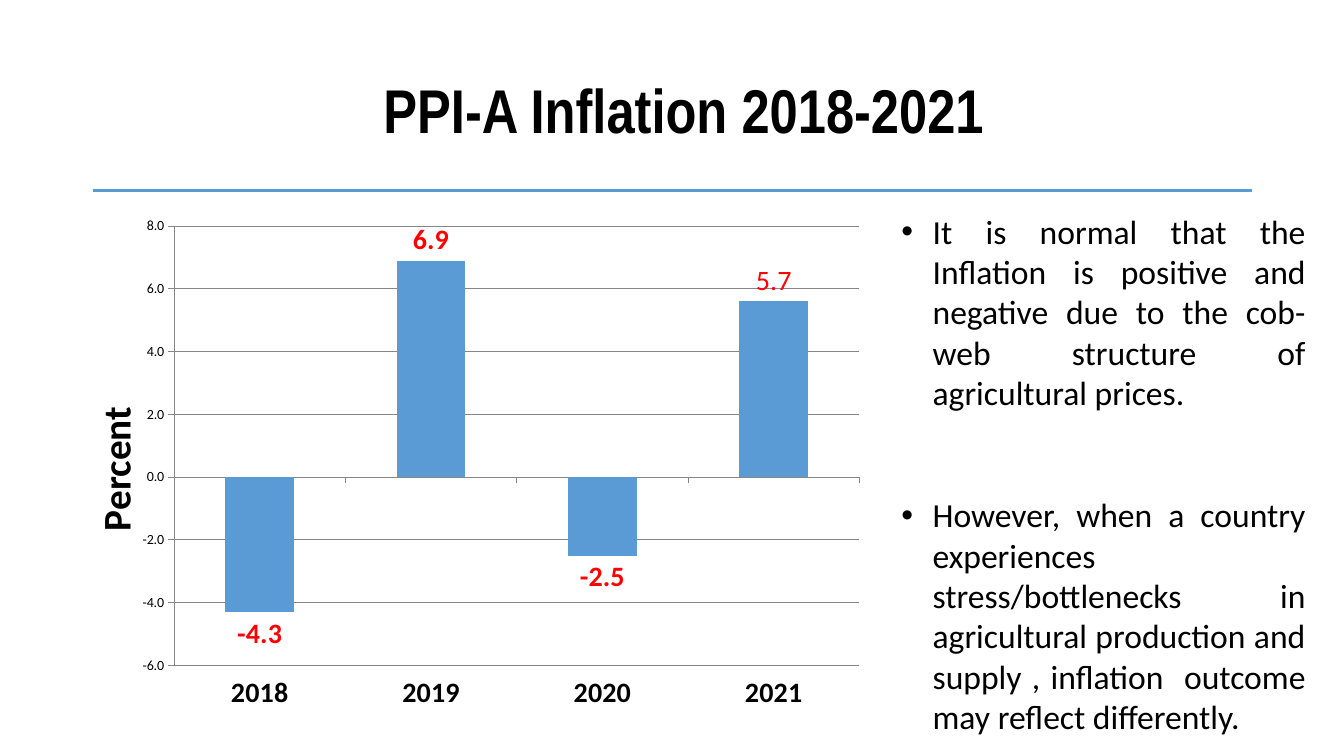
from typing import NamedTuple

from lxml.etree import SubElement
from pptx import Presentation
from pptx.chart.data import CategoryChartData
from pptx.dml.color import RGBColor
from pptx.enum.chart import XL_CHART_TYPE, XL_LABEL_POSITION, XL_TICK_LABEL_POSITION, XL_TICK_MARK
from pptx.enum.shapes import MSO_CONNECTOR
from pptx.enum.text import MSO_ANCHOR, MSO_AUTO_SIZE, PP_ALIGN
from pptx.oxml import parse_xml
from pptx.oxml.ns import nsdecls, qn
from pptx.util import Inches, Pt

BLACK, BLUE, RED, GRAY = "000000", "5B9BD5", "FF0000", "868686"


class Box(NamedTuple):
    left: float
    top: float
    width: float
    height: float


class Bullet(NamedTuple):
    text: str
    space_before: float


BULLETS = [
    Bullet("It is normal that the Inflation is positive and negative due to the "
           "cob-web structure of agricultural prices.", 0),
    Bullet("However, when a country experiences stress/bottlenecks in agricultural "
           "production and supply , inflation  outcome may reflect differently.", 58.6),
]
INFLATION = {"2018": -4.3, "2019": 6.9, "2020": -2.5, "2021": 5.6}


def rgb(color: str) -> RGBColor:
    return RGBColor.from_string(color)


def set_font(font, size: float, color: str = BLACK, bold: bool = False, name: str = "Calibri") -> None:
    font.name, font.size, font.bold = name, Pt(size), bold
    font.color.rgb = rgb(color)


def place(shape, box: Box) -> None:
    shape.left, shape.top, shape.width, shape.height = map(Inches, box)


def add_title(s) -> None:
    sp = s.shapes.title
    place(sp, Box(1.16, 0.4, 11.25, 0.93))
    tf = sp.text_frame
    tf.text = "PPI-A Inflation 2018-2021"
    tf.auto_size = MSO_AUTO_SIZE.NONE
    tf.vertical_anchor = MSO_ANCHOR.TOP
    tf.margin_top, tf.margin_bottom = Inches(0.4), 0
    p = tf.paragraphs[0]
    p.alignment, p.line_spacing = PP_ALIGN.CENTER, 0.9
    set_font(p.runs[0].font, 44.1, bold=True, name="Arial Narrow")


def add_rule(s) -> None:
    line = s.shapes.add_connector(
        MSO_CONNECTOR.STRAIGHT, Inches(0.92), Inches(1.89), Inches(12.42), Inches(1.89))
    line.line.color.rgb, line.line.width = rgb(BLUE), Pt(2.25)
    SubElement(line._element.spPr, qn("a:effectLst"))


def add_bullets(s, bullets: list[Bullet]) -> None:
    sp = s.placeholders[1]
    place(sp, Box(8.84, 2.04, 4.21, 5.35))
    tf = sp.text_frame
    tf.auto_size = MSO_AUTO_SIZE.NONE
    tf.text = "\n".join(bullet.text for bullet in bullets)
    for p, bullet in zip(tf.paragraphs, bullets):
        pPr = p._p.get_or_add_pPr()
        pPr.set("marL", str(Inches(0.31)))
        pPr.set("indent", str(-Inches(0.31)))
        SubElement(pPr, qn("a:buFont")).set("typeface", "Arial")
        SubElement(pPr, qn("a:buChar")).set("char", "•")
        p.alignment = PP_ALIGN.JUSTIFY
        p.space_before, p.space_after = Pt(bullet.space_before), Pt(0)
        set_font(p.runs[0].font, 24)


def set_layout(element, index: int, target: str, **fractions: float) -> None:
    for old in element.findall(qn("c:layout")):
        element.remove(old)
    layout = parse_xml(f"<c:layout {nsdecls('c')}><c:manualLayout/></c:layout>")
    settings = {"layoutTarget": target} if target else {}
    settings |= {"xMode": "edge", "yMode": "edge"} | fractions
    for tag, value in settings.items():
        SubElement(layout[0], qn(f"c:{tag}")).set("val", str(value))
    element.insert(index, layout)


def add_inflation_chart(s) -> None:
    data = CategoryChartData(number_format="0.0")
    data.categories = list(INFLATION)
    data.add_series("Series 1", list(INFLATION.values()))
    frame = s.shapes.add_chart(
        XL_CHART_TYPE.COLUMN_CLUSTERED, *map(Inches, Box(0.4, 2.04, 8.29, 5.07)), data)
    chart = frame.chart
    chart.has_legend = chart.has_title = False
    set_font(chart.font, 10)

    cat, val = chart.category_axis, chart.value_axis
    cat.tick_label_position = XL_TICK_LABEL_POSITION.LOW
    set_font(cat.tick_labels.font, 20, bold=True)
    val.minimum_scale, val.maximum_scale, val.major_unit = -6, 8, 2
    val.tick_labels.number_format = "0.0"
    val.tick_labels.number_format_is_linked = False
    val.has_major_gridlines = True
    for axis in (cat, val):
        axis.major_tick_mark = XL_TICK_MARK.OUTSIDE
    for line in (cat.format.line, val.format.line, val.major_gridlines.format.line):
        line.color.rgb, line.width = rgb(GRAY), Pt(0.75)

    title = val.axis_title
    title.text_frame.text = "Percent"
    set_font(title.text_frame.paragraphs[0].runs[0].font, 28, bold=True)
    set_layout(title._element, 1, "", x=0.05, y=0.38)
    set_layout(chart._chartSpace.chart.plotArea, 0, "inner", x=0.16, y=0.04, w=0.82, h=0.86)

    plot = chart.plots[0]
    plot.gap_width, plot.vary_by_categories = 150, False
    series = plot.series[0]
    series.invert_if_negative = False
    series.format.fill.solid()
    series.format.fill.fore_color.rgb = rgb(BLUE)
    labels = series.data_labels
    labels.show_value = True
    labels.number_format, labels.number_format_is_linked = "0.0", False
    labels.position = XL_LABEL_POSITION.OUTSIDE_END
    set_font(labels.font, 20, RED, True)
    last = series.points[3].data_label
    last.text_frame.text = "5.7"
    last.position = XL_LABEL_POSITION.OUTSIDE_END
    set_font(last.text_frame.paragraphs[0].runs[0].font, 20, RED)


def main() -> None:
    prs = Presentation()
    prs.slide_width, prs.slide_height = Inches(13.33), Inches(7.5)
    s = prs.slides.add_slide(prs.slide_layouts[1])
    add_rule(s)
    add_title(s)
    add_bullets(s, BULLETS)
    add_inflation_chart(s)
    prs.save("out.pptx")


if __name__ == "__main__":
    main()
